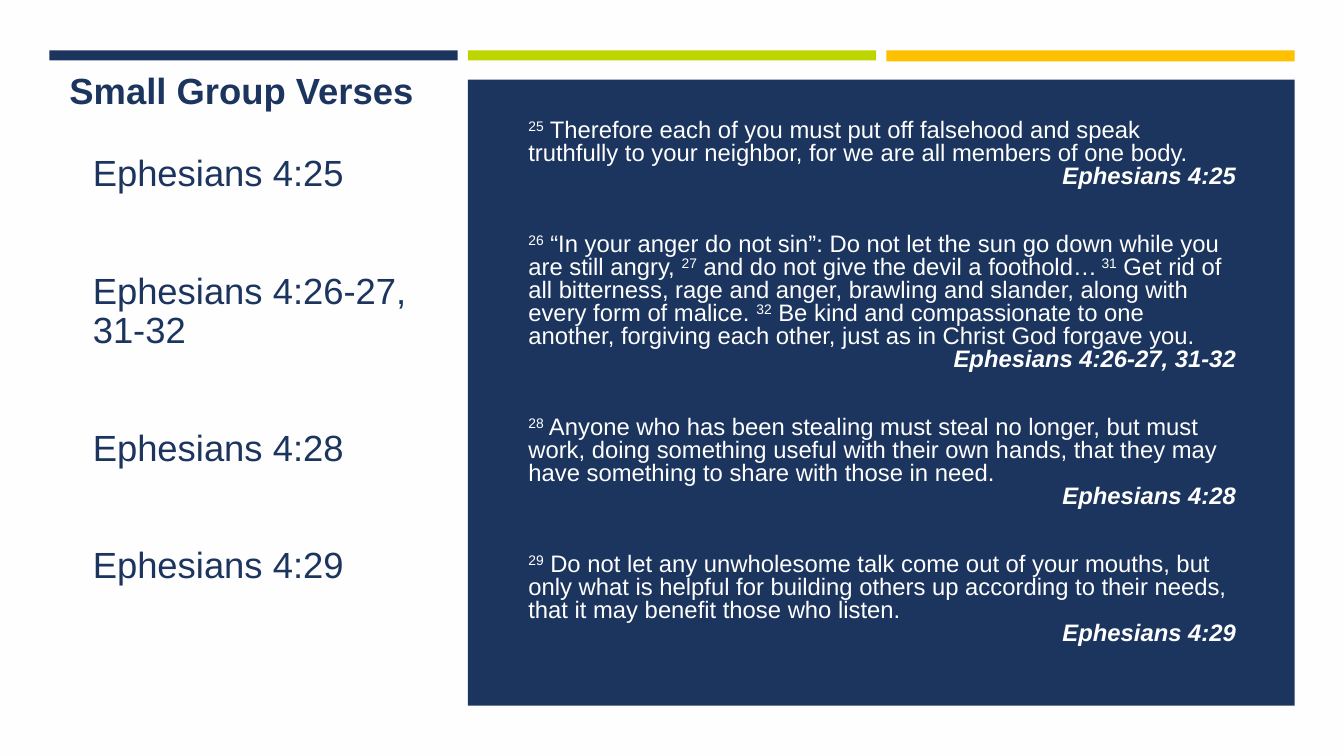
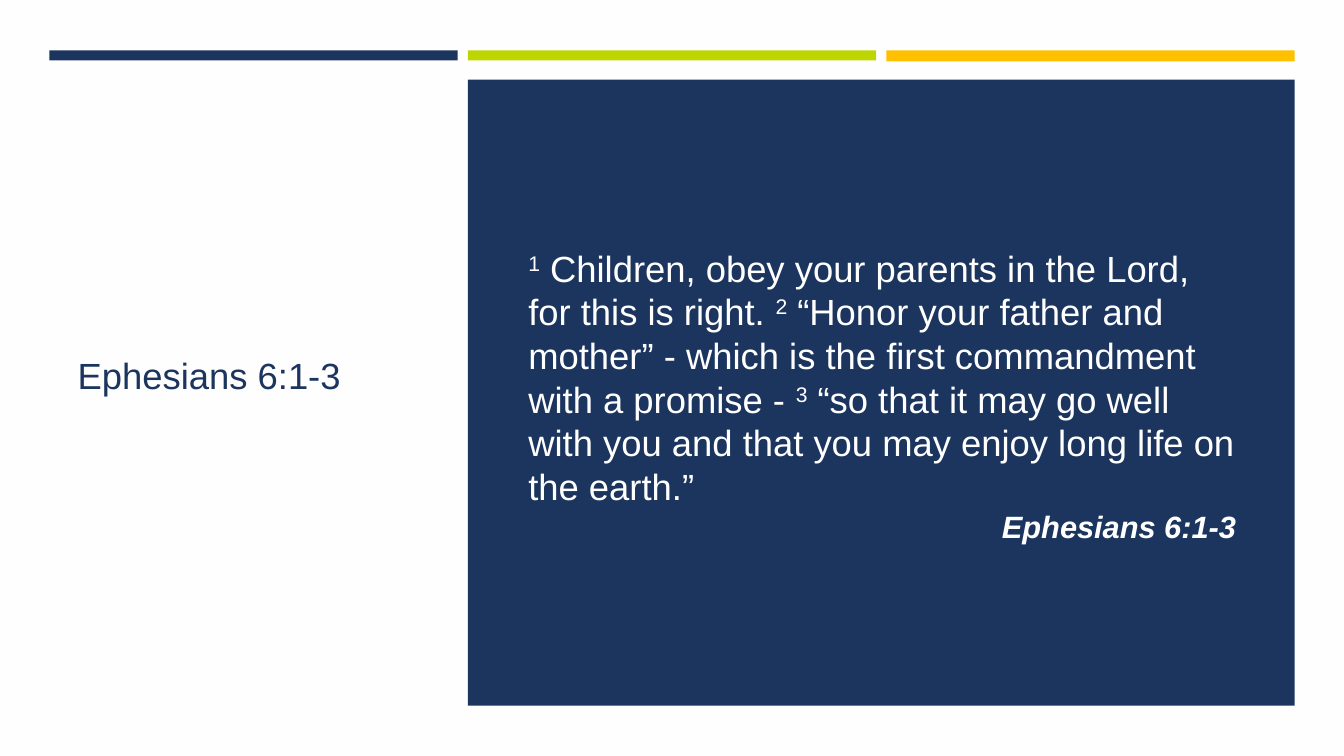
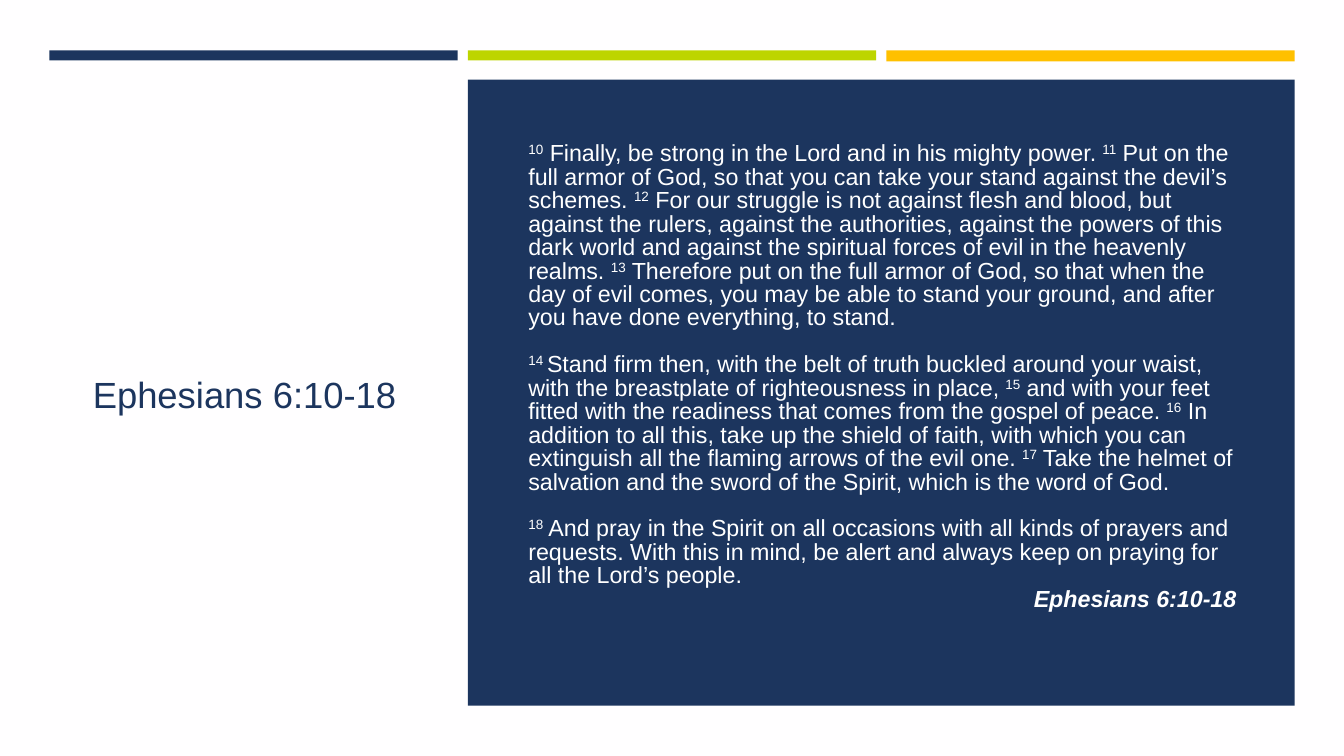
import pptx
import pptx.dml.color
import pptx.enum.shapes
import pptx.enum.text
import pptx.oxml.ns
import pptx.util
from lxml import etree

Inches, Pt = pptx.util.Inches, pptx.util.Pt
LEFT, RIGHT = pptx.enum.text.PP_ALIGN.LEFT, pptx.enum.text.PP_ALIGN.RIGHT

# Shared look
NAVY, LIME, GOLD, WHITE, PAPER = "1C355E", "BDD500", "FFC000", "FFFFFF", "FFFEFF"
FONT = "Arial"
REFERENCE_SIZE = 26

# Grid of three columns; the verse panel spans the last two
MARGIN, COLUMN, GUTTER = 0.49, 4.05, 0.1
STEP = COLUMN + GUTTER
BAND_TOP, PANEL_TOP, PANEL_HEIGHT = 0.5, 0.79, 6.21
VERSE_LEFT, VERSE_WIDTH = MARGIN + STEP + 0.5, 7.22


def color(hex_code):
    return pptx.dml.color.RGBColor.from_string(hex_code)


def write_paragraph(frame, text, size, hex_code, spacing, gap=0, align=LEFT,
                    bold=False, italic=False):
    """Add a paragraph; parts between ^ marks are raised verse numbers."""
    paragraph = frame.paragraphs[0]
    if paragraph.runs:
        paragraph = frame.add_paragraph()
    paragraph.alignment = align
    paragraph.line_spacing = spacing
    paragraph.space_before, paragraph.space_after = Pt(gap), Pt(0)
    properties = paragraph._p.get_or_add_pPr()
    properties.set("marL", "0")
    properties.set("indent", "0")
    etree.SubElement(properties, pptx.oxml.ns.qn("a:buNone"))
    for index, part in enumerate(text.split("^")):
        if not part:
            continue
        run = paragraph.add_run()
        run.text = part
        run.font.name, run.font.size = FONT, Pt(size)
        run.font.bold, run.font.italic = bold, italic
        run.font.color.rgb = color(hex_code)
        if index % 2:
            run.font._element.set("baseline", "30000")


# Content: boxes are left, top, width, height; passages are (text, citation)
lessons = [
    {
        "heading": "Small Group Verses",
        "references": ["Ephesians 4:25", "Ephesians 4:26-27, 31-32",
                       "Ephesians 4:28", "Ephesians 4:29"],
        "reference_box": (0.82, 1.17, 3.34, 5.02), "reference_inset": 0.05,
        "verse_top": 1.17, "verse_height": 5.49, "verse_inset": 0.28,
        "size": 17, "citation_size": 17, "spacing": 0.8, "gap": 32.6,
        "passages": [
            ("^25^ Therefore each of you must put off falsehood and speak truthfully "
             "to your neighbor, for we are all members of one body.",
             "Ephesians 4:25"),
            ("^26^ “In your anger do not sin”: Do not let the sun go down while you "
             "are still angry, ^27^ and do not give the devil a foothold…^ 31^ Get rid "
             "of all bitterness, rage and anger, brawling and slander, along with "
             "every form of malice. ^32^ Be kind and compassionate to one another, "
             "forgiving each other, just as in Christ God forgave you.",
             "Ephesians 4:26-27, 31-32"),
            ("^28^ Anyone who has been stealing must steal no longer, but must work, "
             "doing something useful with their own hands, that they may have "
             "something to share with those in need.",
             "Ephesians 4:28"),
            ("^29^ Do not let any unwholesome talk come out of your mouths, but only "
             "what is helpful for building others up according to their needs, that "
             "it may benefit those who listen.",
             "Ephesians 4:29"),
        ],
    },
    {
        "heading": "",
        "references": ["Ephesians 6:1-3"],
        "reference_box": (0.67, 1.17, 3.48, 5.15), "reference_inset": 0.05,
        "verse_top": 1.01, "verse_height": 5.82, "verse_inset": 0.05,
        "size": 26, "citation_size": 22, "spacing": 1.0, "gap": 0,
        "passages": [
            ("^1^ Children, obey your parents in the Lord, for this is right. "
             "^2^ “Honor your father and mother” - which is the first commandment "
             "with a promise - ^3^ “so that it may go well with you and that you may "
             "enjoy long life on the earth.”",
             "Ephesians 6:1-3"),
        ],
    },
    {
        "heading": "",
        "references": ["Ephesians 6:10-18"],
        "reference_box": (0.82, 1.17, 3.34, 5.15), "reference_inset": 0.44,
        "verse_top": 1.17, "verse_height": 5.15, "verse_inset": 0.05,
        "size": 16.6, "citation_size": 16.6, "spacing": 0.84, "gap": 16.7,
        "passages": [
            ("^10^ Finally, be strong in the Lord and in his mighty power. ^11^ Put on "
             "the full armor of God, so that you can take your stand against the "
             "devil’s schemes. ^12^ For our struggle is not against flesh and blood, "
             "but against the rulers, against the authorities, against the powers of "
             "this dark world and against the spiritual forces of evil in the "
             "heavenly realms. ^13^ Therefore put on the full armor of God, so that "
             "when the day of evil comes, you may be able to stand your ground, and "
             "after you have done everything, to stand.",
             ""),
            ("^14 ^Stand firm then, with the belt of truth buckled around your waist, "
             "with the breastplate of righteousness in place, ^15^ and with your feet "
             "fitted with the readiness that comes from the gospel of peace. ^16^ In "
             "addition to all this, take up the shield of faith, with which you can "
             "extinguish all the flaming arrows of the evil one. ^17^ Take the helmet "
             "of salvation and the sword of the Spirit, which is the word of God.",
             ""),
            ("^18^ And pray in the Spirit on all occasions with all kinds of prayers "
             "and requests. With this in mind, be alert and always keep on praying "
             "for all the Lord’s people.",
             "Ephesians 6:10-18"),
        ],
    },
]

deck = pptx.Presentation()
deck.slide_width, deck.slide_height = Inches(13.33), Inches(7.5)
deck.slide_master.background.fill.solid()
deck.slide_master.background.fill.fore_color.rgb = color(PAPER)

for lesson in lessons:
    slide = deck.slides.add_slide(deck.slide_layouts[1])
    references, verses = slide.placeholders

    # Colour bands, one a column, and the verse panel
    blocks = [
        (0, BAND_TOP, COLUMN, 0.1, NAVY),
        (1, BAND_TOP, COLUMN, 0.1, LIME),
        (2, BAND_TOP, COLUMN, 0.11, GOLD),
        (1, PANEL_TOP, STEP + COLUMN, PANEL_HEIGHT, NAVY),
    ]
    for column, top, width, height, fill in blocks:
        block = slide.shapes.add_shape(
            pptx.enum.shapes.MSO_SHAPE.RECTANGLE, Inches(MARGIN + column * STEP),
            Inches(top), Inches(width), Inches(height))
        block.shadow.inherit = False
        block.fill.solid()
        block.fill.fore_color.rgb = color(fill)
        block.line.fill.background()

    # Bring the verses in front of the panel
    slide.shapes.element.append(verses.element)

    # Text areas: place, top inset, bottom inset
    areas = [
        (references, lesson["reference_box"], lesson["reference_inset"], 0.05),
        (verses, (VERSE_LEFT, lesson["verse_top"], VERSE_WIDTH,
                  lesson["verse_height"]), 0.05, lesson["verse_inset"]),
    ]
    if lesson["heading"]:
        heading = slide.shapes.add_textbox(0, 0, 0, 0)
        areas.append((heading, (0.59, 0.67, 3.79, 0.5), 0.05, 0.05))
    for area, box, inset_top, inset_bottom in areas:
        area.left, area.top, area.width, area.height = map(Inches, box)
        frame = area.text_frame
        frame.word_wrap = True
        frame.auto_size = pptx.enum.text.MSO_AUTO_SIZE.NONE
        frame.vertical_anchor = pptx.enum.text.MSO_ANCHOR.MIDDLE
        frame.margin_left = frame.margin_right = Inches(0.1)
        frame.margin_top, frame.margin_bottom = Inches(inset_top), Inches(inset_bottom)

    # References on the left
    if lesson["heading"]:
        write_paragraph(heading.text_frame, lesson["heading"], REFERENCE_SIZE, NAVY,
                        0.9, bold=True)
    for index, reference in enumerate(lesson["references"]):
        write_paragraph(references.text_frame, reference, REFERENCE_SIZE, NAVY, 0.9,
                        gap=56 if index else 0)

    # Passages on the panel
    for index, (passage, citation) in enumerate(lesson["passages"]):
        write_paragraph(verses.text_frame, passage, lesson["size"], WHITE,
                        lesson["spacing"], gap=lesson["gap"] if index else 0)
        if citation:
            write_paragraph(verses.text_frame, citation, lesson["citation_size"],
                            WHITE, lesson["spacing"], align=RIGHT, bold=True,
                            italic=True)

deck.save("out.pptx")
